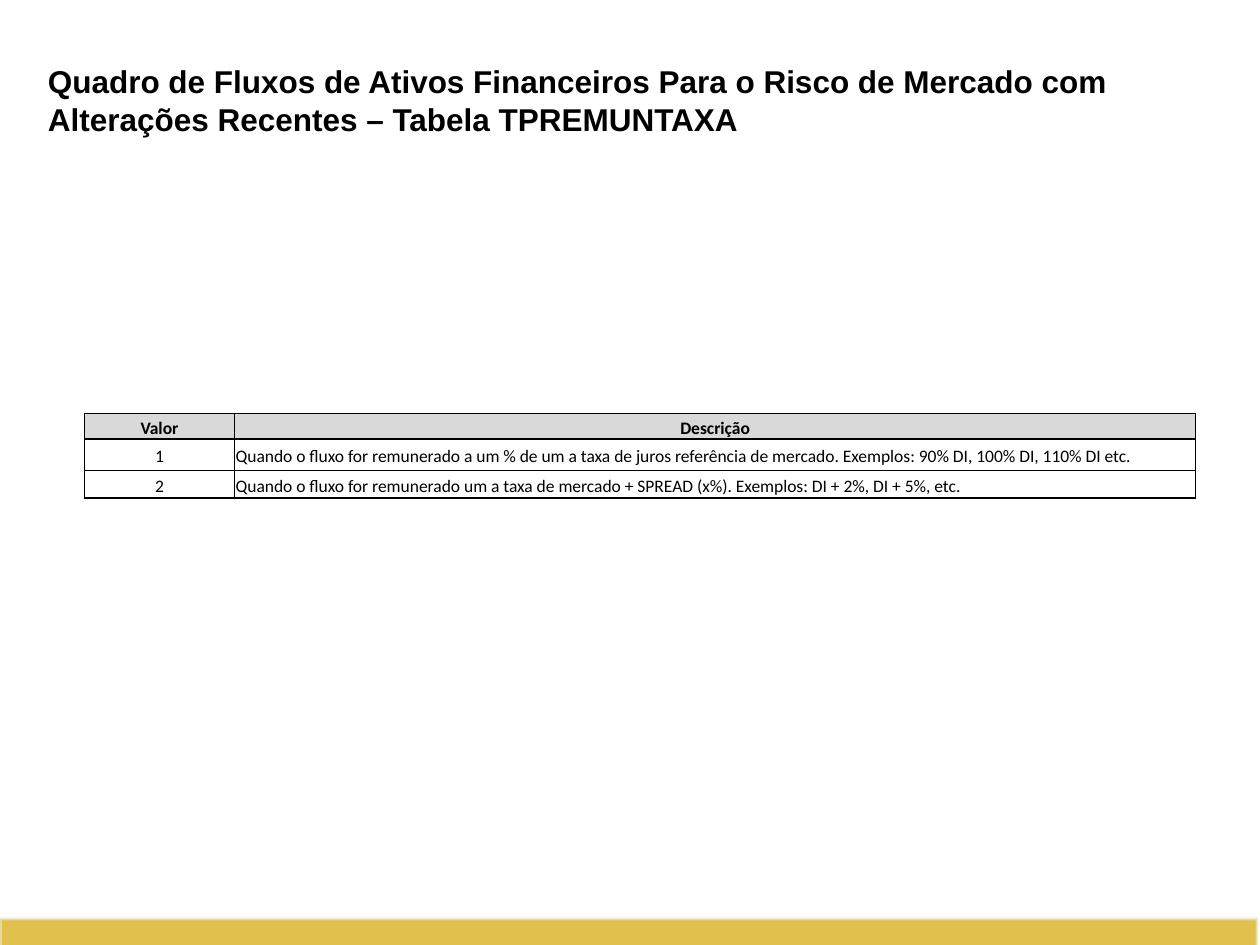
from lxml.etree import SubElement
from pptx import Presentation
from pptx.dml.color import RGBColor
from pptx.enum.shapes import MSO_SHAPE as Shape
from pptx.enum.text import MSO_ANCHOR as Anchor, MSO_AUTO_SIZE as AutoSize, PP_ALIGN as Align
from pptx.oxml.ns import qn
from pptx.util import Inches, Pt

TITLE = ("Quadro de Fluxos de Ativos Financeiros Para o Risco de Mercado com "
         "Alterações Recentes – Tabela TPREMUNTAXA")
RATE_TYPES = [
    ("Valor", "Descrição"),
    ("1", "Quando o fluxo for remunerado a um % de um a taxa de juros referência de mercado. "
          "Exemplos: 90% DI, 100% DI, 110% DI etc."),
    ("2", "Quando o fluxo for remunerado um a taxa de mercado + SPREAD (x%). "
          "Exemplos: DI + 2%, DI + 5%, etc."),
]
COLUMN_SHARES = (0.135, 0.865)
ROW_HEIGHTS = (0.2, 0.25, 0.22)


def rgb(value):
    """Turn a hex string into a colour."""
    return RGBColor.from_string(value)


def apply(target, formats):
    """Set each named attribute on the target."""
    for name, value in formats.items():
        setattr(target, name, value)


def style_font(font, name, size, bold):
    """Give a font its face, size, weight and black colour."""
    apply(font, {"name": name, "size": Pt(size), "bold": bold})
    font.color.rgb = rgb("000000")


def add_title(slide, left, top, width, height):
    """Fill and place the title placeholder."""
    title = slide.shapes.title
    apply(title, {"left": Inches(left), "top": Inches(top),
                  "width": Inches(width), "height": Inches(height)})
    frame = title.text_frame
    apply(frame, {"text": TITLE, "word_wrap": True, "vertical_anchor": Anchor.TOP,
                  "auto_size": AutoSize.NONE})
    heading = frame.paragraphs[0]
    apply(heading, {"alignment": Align.LEFT, "line_spacing": 1.0, "space_before": Pt(0)})
    style_font(heading.font, "Arial", 18, True)


def add_footer_band(slide, left, top, width, height):
    """Draw the gold band along the bottom edge."""
    band = slide.shapes.add_shape(Shape.RECTANGLE, Inches(left), Inches(top),
                                  Inches(width), Inches(height))
    band.shadow.inherit = False
    band.fill.solid()
    band.fill.fore_color.rgb = rgb("E1C14D")
    band.line.width = Pt(2)
    band.line.color.rgb = rgb("F2F2F2")
    outline = band.line.fill._xPr.find(qn("a:solidFill"))
    SubElement(outline[0], qn("a:alpha"), val="50000")


def add_borders(cell, color, width):
    """Draw a solid line on all four sides of a cell."""
    properties = cell._tc.get_or_add_tcPr()
    for side in ("lnL", "lnR", "lnT", "lnB"):
        border = SubElement(properties, qn(f"a:{side}"), w=str(Pt(width)))
        fill = SubElement(border, qn("a:solidFill"))
        SubElement(fill, qn("a:srgbClr"), val=color)


def fill_cell(cell, text, is_header, is_centered):
    """Write and format one cell of the rate table."""
    apply(cell, {"text": text, "vertical_anchor": Anchor.MIDDLE,
                 "margin_left": Inches(0.01), "margin_right": Inches(0.01),
                 "margin_top": Inches(0.01), "margin_bottom": 0})
    entry = cell.text_frame.paragraphs[0]
    apply(entry, {"alignment": Align.CENTER if is_centered else Align.LEFT,
                  "line_spacing": 1.15, "space_after": Pt(10)})
    style_font(entry.runs[0].font, "Calibri", 10, is_header)
    add_borders(cell, "000000", 1)
    if is_header:
        cell.fill.solid()
        cell.fill.fore_color.rgb = rgb("D9D9D9")
    else:
        cell.fill.background()


def add_rate_table(slide, left, top, width):
    """Build the table of rate types and their descriptions."""
    table = slide.shapes.add_table(len(RATE_TYPES), len(COLUMN_SHARES), Inches(left), Inches(top),
                                   Inches(width), Inches(sum(ROW_HEIGHTS))).table
    apply(table, {"first_row": False, "horz_banding": False})
    for column, share in zip(table.columns, COLUMN_SHARES):
        column.width = Inches(width * share)
    for row_index, (row, height, texts) in enumerate(zip(table.rows, ROW_HEIGHTS, RATE_TYPES)):
        row.height = Inches(height)
        for column_index, (cell, text) in enumerate(zip(row.cells, texts)):
            is_header = row_index == 0
            fill_cell(cell, text, is_header, is_header or column_index == 0)


def main():
    """Build the slide and save it."""
    deck = Presentation()
    apply(deck, {"slide_width": Inches(10), "slide_height": Inches(7.5)})
    slide = deck.slides.add_slide(deck.slide_layouts[5])
    add_footer_band(slide, 0, 7.29, 9.98, 0.24)
    add_rate_table(slide, 0.67, 3.28, 8.82)
    add_title(slide, 0.28, 0.44, 9.37, 0.71)
    deck.save("out.pptx")


if __name__ == "__main__":
    main()
